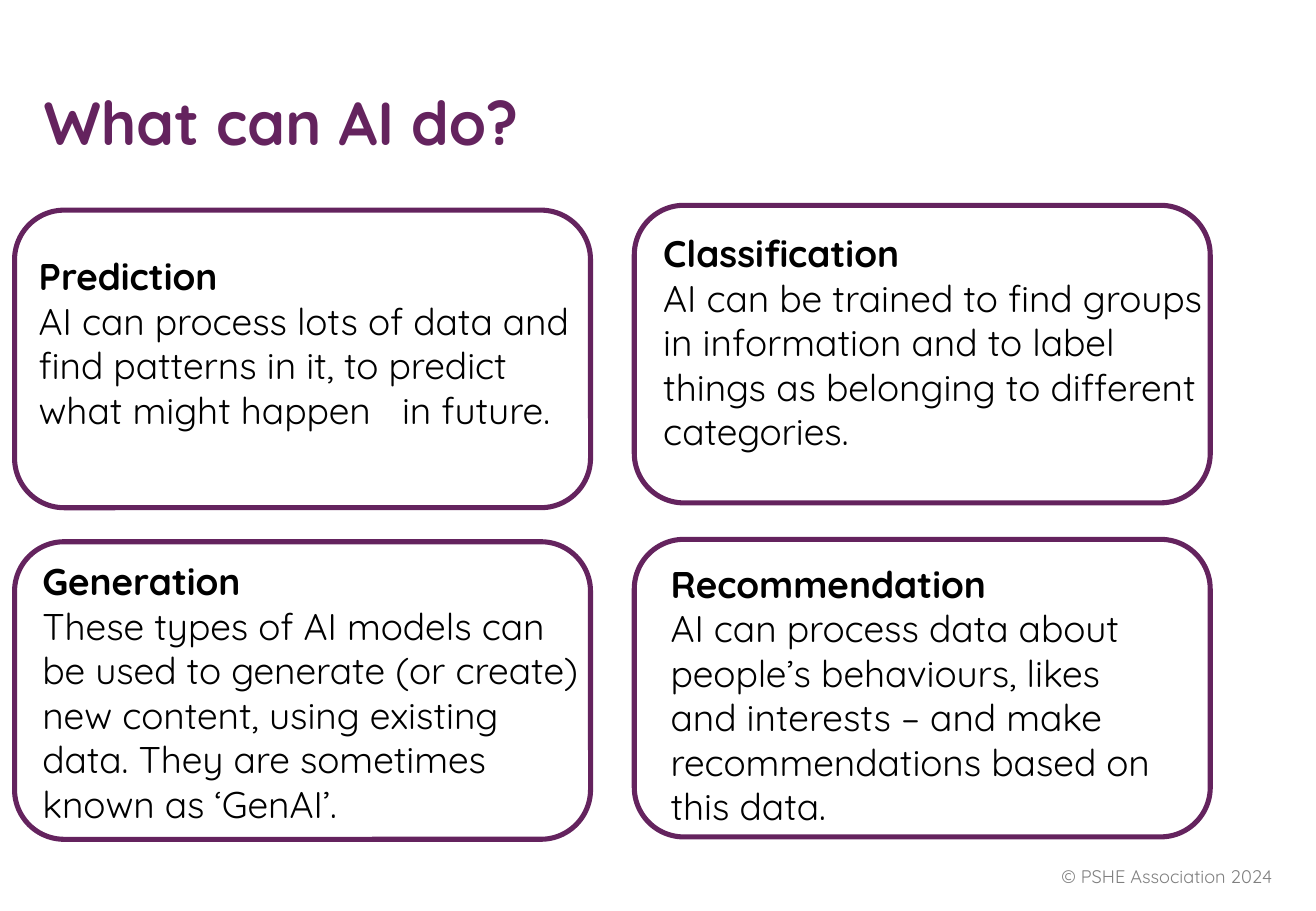
from pptx import Presentation, util as u
from pptx.dml.color import RGBColor as Rgb
from pptx.enum import shapes, text
from lxml import etree

PX = 9144  # 100 px to the inch
theme = {
    "font": "Quicksand",
    "plum": Rgb(0x64, 0x23, 0x5E),
    "ink": Rgb(0, 0, 0),
    "grey": Rgb(0x80, 0x80, 0x80),
    "title": 36,
    "body": 22,
    "foot": 10.8,
}


def add_box(spot, anchor=text.MSO_ANCHOR.TOP):
    box = slide.shapes.add_textbox(*[n * PX for n in spot])
    frame = box.text_frame
    frame.word_wrap = True
    frame.vertical_anchor = anchor
    return frame


def add_run(para, words, size, color, bold=False):
    run = para.add_run()
    run.text = words
    font = run.font
    font.name = theme["font"]
    font.size = u.Pt(theme[size])
    font.color.rgb = theme[color]
    font.bold = bold


deck = Presentation()
deck.slide_width, deck.slide_height = 1083 * PX, 750 * PX
slide = deck.slides.add_slide(deck.slide_layouts[6])

# Title and footer
para = add_box((26, 59, 848, 76), text.MSO_ANCHOR.BOTTOM).paragraphs[0]
para.line_spacing = u.Pt(43)
add_run(para, "What can AI do?", "title", "plum", True)

para = add_box((813, 701, 244, 40), text.MSO_ANCHOR.MIDDLE).paragraphs[0]
para.alignment = text.PP_ALIGN.RIGHT
add_run(para, "© PSHE Association 2024", "foot", "grey")

# Cards: heading, body, frame corner, text box
cards = [
    ("Prediction",
     "AI can process lots of data and find patterns in it, "
     "to predict what might happen\tin future.",
     (12, 173), (22, 204, 480, 232)),
    ("Classification",
     "AI can be trained to find groups in information and to label "
     "things as belonging to different categories.",
     (522, 169), (536, 185, 480, 232)),
    ("Generation",
     "These types of AI models can be used to generate (or create) "
     "new content, using existing data. They are sometimes known as ‘GenAI’.",
     (12, 446), (25, 455, 474, 269)),
    ("Recommendation",
     "AI can process data about people’s behaviours, likes and interests "
     "– and make recommendations based on this data.",
     (522, 444), (542, 457, 428, 269)),
]
for head, body, (left, top), spot in cards:
    frame = add_box(spot)
    add_run(frame.paragraphs[0], head, "body", "ink", True)
    para = frame.add_paragraph()
    if "\t" in body:
        props = para._p.get_or_add_pPr()
        space = props.nsmap["a"]
        tabs = etree.SubElement(props, f"{{{space}}}tabLst")
        etree.SubElement(tabs, f"{{{space}}}tab", pos=str(299 * PX), algn="l")
    add_run(para, body, "body", "ink")

    card = slide.shapes.add_shape(
        shapes.MSO_SHAPE.ROUNDED_RECTANGLE,
        left * PX, top * PX, 474 * PX, 245 * PX)
    card.shadow.inherit = False
    card.fill.background()
    card.line.color.rgb = theme["plum"]
    card.line.width = u.Pt(3)

deck.save("out.pptx")
